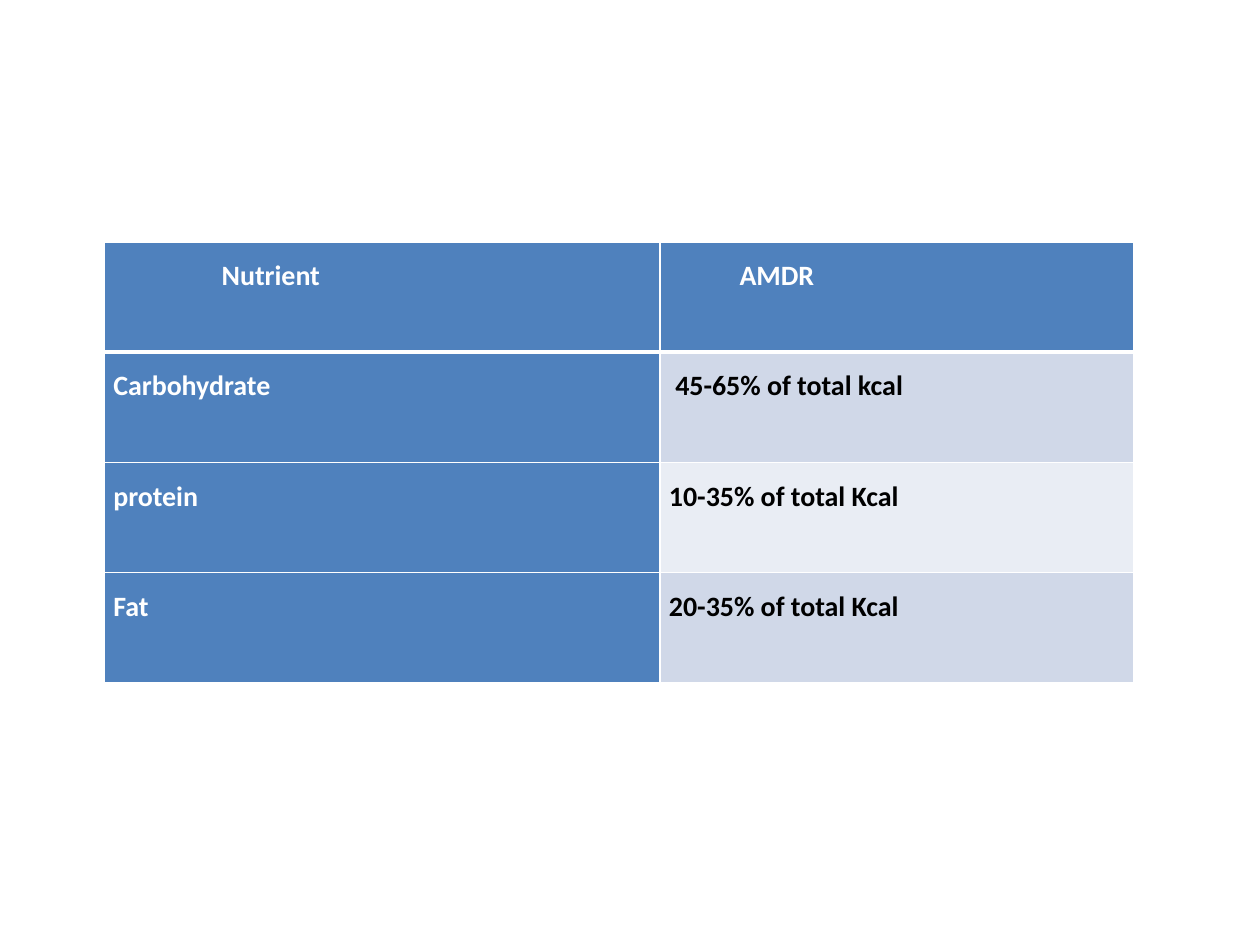
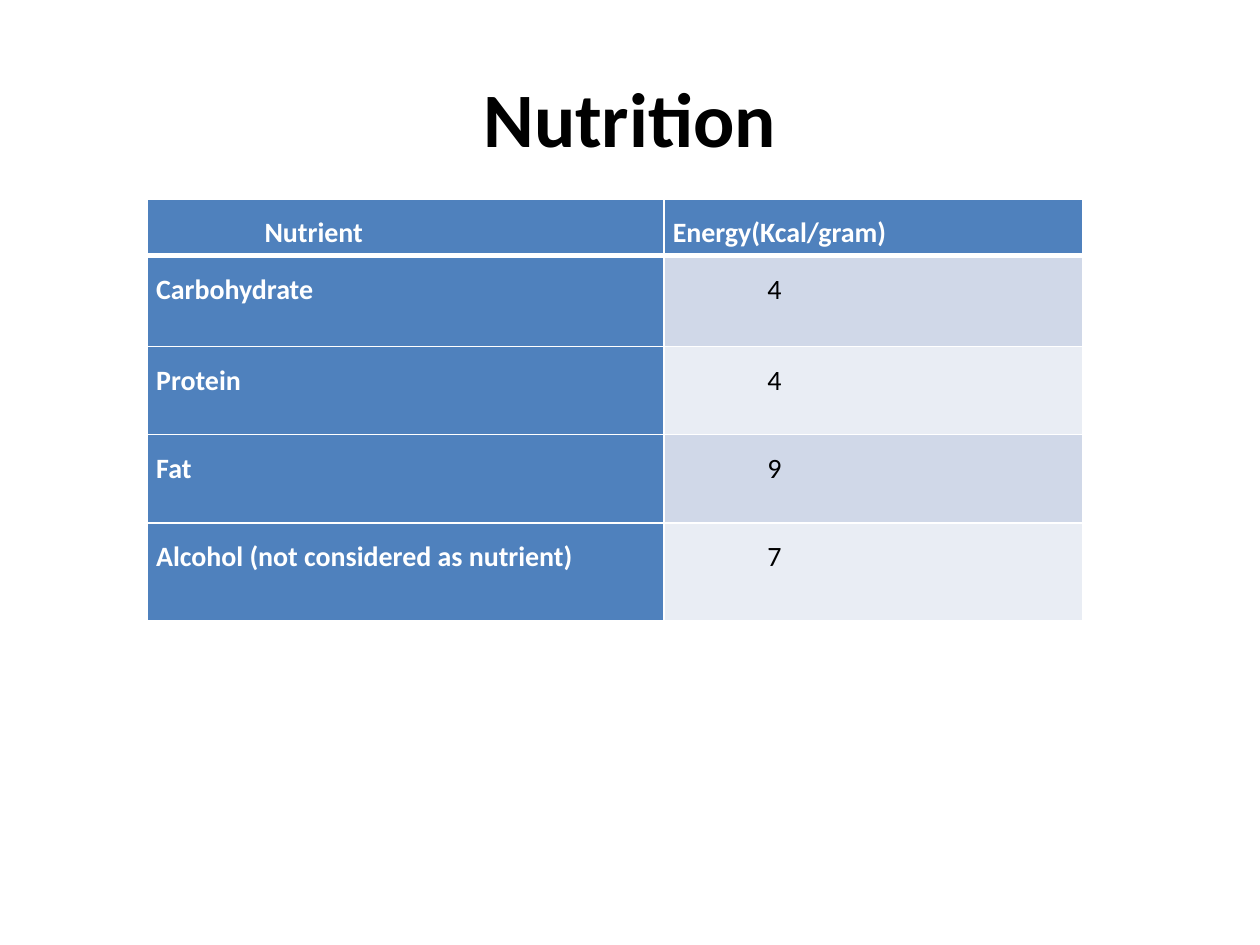
from dataclasses import dataclass

from lxml import etree
from pptx import Presentation
from pptx.dml.color import RGBColor
from pptx.enum.text import MSO_ANCHOR, PP_ALIGN
from pptx.oxml.ns import qn
from pptx.util import Inches, Pt

JUSTIFY, CENTER = PP_ALIGN.JUSTIFY, PP_ALIGN.CENTER
MIDDLE = MSO_ANCHOR.MIDDLE


@dataclass(frozen=True)
class Theme:
    font: str = "Calibri"
    title_size: int = 44
    table_size: int = 16
    black: str = "000000"
    white: str = "FFFFFF"
    header: str = "4F81BD"
    bands: tuple = ("D0D8E8", "E9EDF4")
    cell_margin: float = 0.07
    thin: int = 1
    thick: int = 3


theme = Theme()


def style_text(p, size, color, bold, align):
    p.alignment = align
    for r in p.runs:
        r.font.name = theme.font
        r.font.size = Pt(size)
        r.font.bold = bold
        r.font.color.rgb = RGBColor.from_string(color)


def add_border(cell, side, width):
    tc_pr = cell._tc.get_or_add_tcPr()
    ln = etree.SubElement(tc_pr, qn("a:" + side), w=str(Pt(width)))
    fill = etree.SubElement(ln, qn("a:solidFill"))
    etree.SubElement(fill, qn("a:srgbClr"), val=theme.white)


# Each cell holds its text and its extra left indent in inches
NUTRIENT = ("Nutrient", 0.86)
slides = [
    dict(
        title=None, left=0.83, top=1.92, cols=[4.41, 3.76],
        rows=[3.5 / 4] * 4, bold_values=True,
        cells=[
            (NUTRIENT, ("AMDR", 0.56)),
            (("Carbohydrate", 0), ("45-65% of total kcal", 0.05)),
            (("protein", 0), ("10-35% of total Kcal", 0)),
            (("Fat", 0), ("20-35% of total Kcal", 0)),
        ],
    ),
    dict(
        title="Nutrition", left=1.17, top=1.58, cols=[4.1, 3.32],
        rows=[0.45, 0.72, 0.7, 0.7, 0.78], bold_values=False,
        cells=[
            (NUTRIENT, ("Energy(Kcal/gram)", 0)),
            (("Carbohydrate", 0), ("4", 0.75)),
            (("Protein", 0), ("4", 0.75)),
            (("Fat", 0), ("9", 0.75)),
            (("Alcohol (not considered as nutrient)", 0), ("7", 0.75)),
        ],
    ),
]

prs = Presentation()
prs.slide_width, prs.slide_height = Inches(10), Inches(7.5)

for spec in slides:
    s = prs.slides.add_slide(prs.slide_layouts[6])

    # Title
    if spec["title"]:
        sp = s.shapes.add_textbox(Inches(0.5), Inches(0.3), Inches(9), Inches(1.25))
        tf = sp.text_frame
        tf.word_wrap = True
        tf.vertical_anchor = MIDDLE
        tf.text = spec["title"]
        style_text(tf.paragraphs[0], theme.title_size, theme.black, True, CENTER)

    # Table grid
    cols, rows = spec["cols"], spec["rows"]
    table = s.shapes.add_table(
        len(rows), len(cols), Inches(spec["left"]), Inches(spec["top"]),
        Inches(sum(cols)), Inches(sum(rows))).table
    for column, width in zip(table.columns, cols):
        column.width = Inches(width)
    for row, height in zip(table.rows, rows):
        row.height = Inches(height)

    # Table cells
    for i, row_cells in enumerate(spec["cells"]):
        for j, (text, indent) in enumerate(row_cells):
            cell = table.cell(i, j)
            is_head = i == 0 or j == 0
            cell.margin_left = Inches(theme.cell_margin + indent)
            cell.margin_right = Inches(theme.cell_margin)
            cell.margin_top = cell.margin_bottom = 0

            add_border(cell, "lnL", theme.thin)
            add_border(cell, "lnR", theme.thin)
            add_border(cell, "lnT", theme.thick if i == 1 else theme.thin)
            add_border(cell, "lnB", theme.thick if i == 0 else theme.thin)

            cell.fill.solid()
            cell.fill.fore_color.rgb = RGBColor.from_string(
                theme.header if is_head else theme.bands[(i - 1) % 2])

            cell.text_frame.text = text
            p = cell.text_frame.paragraphs[0]
            p.line_spacing = 1.5
            style_text(p, theme.table_size, theme.white if is_head else theme.black,
                       is_head or spec["bold_values"], JUSTIFY)

prs.save("out.pptx")
